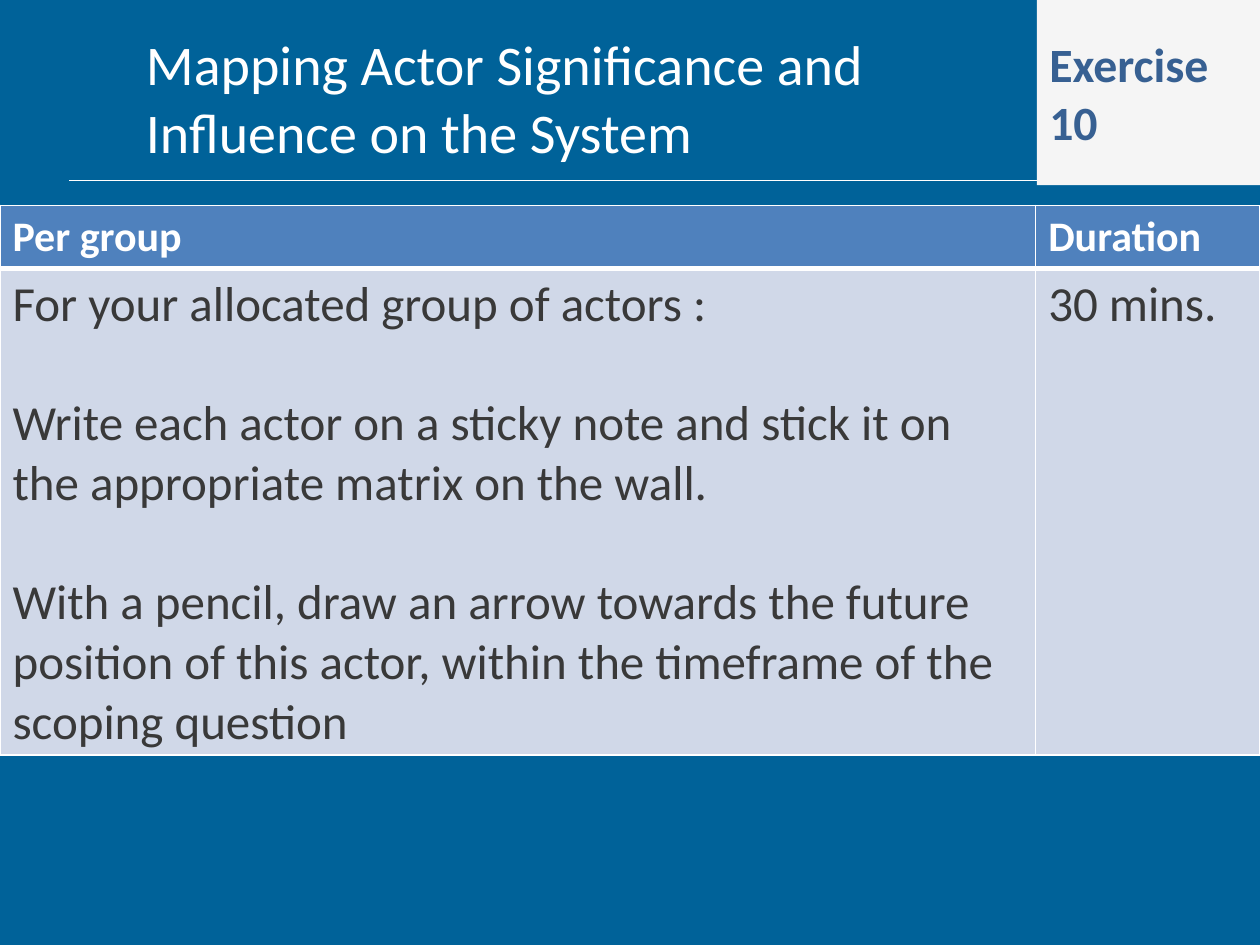
from lxml import etree
from pptx import Presentation
from pptx import util as u
from pptx.dml.color import RGBColor
from pptx.enum import shapes, text
from pptx.oxml.ns import qn

COLORS = {
    "background": "006299",
    "white": "FFFFFF",
    "badge": "F5F5F5",
    "badge_text": "376092",
    "header": "4F81BD",
    "body": "D0D8E8",
    "body_text": "393939",
}


def color(name):
    return RGBColor.from_string(COLORS[name])


def write_text(frame, content, size, ink, bold=False, gap=0, font="Calibri"):
    frame.word_wrap = True
    for index, line in enumerate(content.split("\n")):
        paragraph = frame.paragraphs[0] if index == 0 else frame.add_paragraph()
        paragraph.alignment = text.PP_ALIGN.LEFT
        paragraph.space_before = u.Pt(gap if index else 0)
        run = paragraph.add_run()
        run.text = line
        run.font.name = font
        run.font.size = u.Pt(size)
        run.font.bold = bold
        run.font.color.rgb = color(ink)


class SlideBuilder:
    def __init__(self, slide):
        self.slide = slide
        slide.background.fill.solid()
        slide.background.fill.fore_color.rgb = color("background")

    def rule(self, left, top, width):
        line = self.slide.shapes.add_connector(
            shapes.MSO_CONNECTOR.STRAIGHT,
            u.Inches(left), u.Inches(top), u.Inches(left + width), u.Inches(top))
        line.line.color.rgb = color("white")
        line.line.width = u.Pt(0.5)
        etree.SubElement(line._element.spPr, qn("a:effectLst"))

    def title(self, box, content, **style):
        shape = self.slide.shapes.add_textbox(*map(u.Inches, box))
        shape.text_frame.vertical_anchor = text.MSO_ANCHOR.MIDDLE
        write_text(shape.text_frame, content, **style)

    def badge(self, box, content, **style):
        shape = self.slide.shapes.add_shape(
            shapes.MSO_SHAPE.RECTANGLE, *map(u.Inches, box))
        shape.shadow.inherit = False
        shape.fill.solid()
        shape.fill.fore_color.rgb = color("badge")
        shape.line.fill.background()
        shape.text_frame.vertical_anchor = text.MSO_ANCHOR.MIDDLE
        write_text(shape.text_frame, content, **style)

    def cell(self, cell, content, fill, top, bottom, **style):
        cell.fill.solid()
        cell.fill.fore_color.rgb = color(fill)
        write_text(cell.text_frame, content, **style)
        properties = cell._tc.get_or_add_tcPr()
        widths = {"lnL": 1, "lnR": 1, "lnT": top, "lnB": bottom}
        for index, (side, width) in enumerate(widths.items()):
            border = etree.Element(qn(f"a:{side}"), w=str(u.Pt(width)))
            paint = etree.SubElement(border, qn("a:solidFill"))
            etree.SubElement(paint, qn("a:srgbClr"), val=COLORS["white"])
            properties.insert(index, border)

    def table(self, left, top, columns, heights, rows, styles):
        box = (left, top, sum(columns), sum(heights))
        table = self.slide.shapes.add_table(
            len(rows), len(columns), *map(u.Inches, box)).table
        for column, width in zip(table.columns, columns):
            column.width = u.Inches(width)
        for row, height, contents, style in zip(table.rows, heights, rows, styles):
            row.height = u.Inches(height)
            for cell, content in zip(row.cells, contents):
                self.cell(cell, content, **style)


def main():
    presentation = Presentation()
    presentation.slide_width = u.Inches(10)
    presentation.slide_height = u.Inches(7.5)
    builder = SlideBuilder(presentation.slides.add_slide(presentation.slide_layouts[6]))

    builder.rule(0.55, 1.43, 8.92)
    builder.title((1.06, 0.21, 6.89, 1.12),
                  "Mapping Actor Significance and Influence on the System",
                  size=32, ink="white")
    builder.badge((8.23, 0, 1.77, 1.47), "Exercise 10",
                  size=27.3, ink="badge_text", bold=True)

    instructions = "\n".join([
        "For your allocated group of actors :",
        "Write each actor on a sticky note and stick it on the appropriate matrix on the wall.",
        "With a pencil, draw an arrow towards the future position of this actor, "
        "within the timeframe of the scoping question",
    ])
    header = dict(fill="header", top=1, bottom=3, size=24, ink="white", bold=True)
    body = dict(fill="body", top=3, bottom=1, size=28, ink="body_text", gap=34)
    builder.table(0, 1.63, [8.22, 1.78], [0.47, 3.86],
                  [["Per group", "Duration"], [instructions, "30 mins."]],
                  [header, body])

    presentation.save("out.pptx")


if __name__ == "__main__":
    main()
